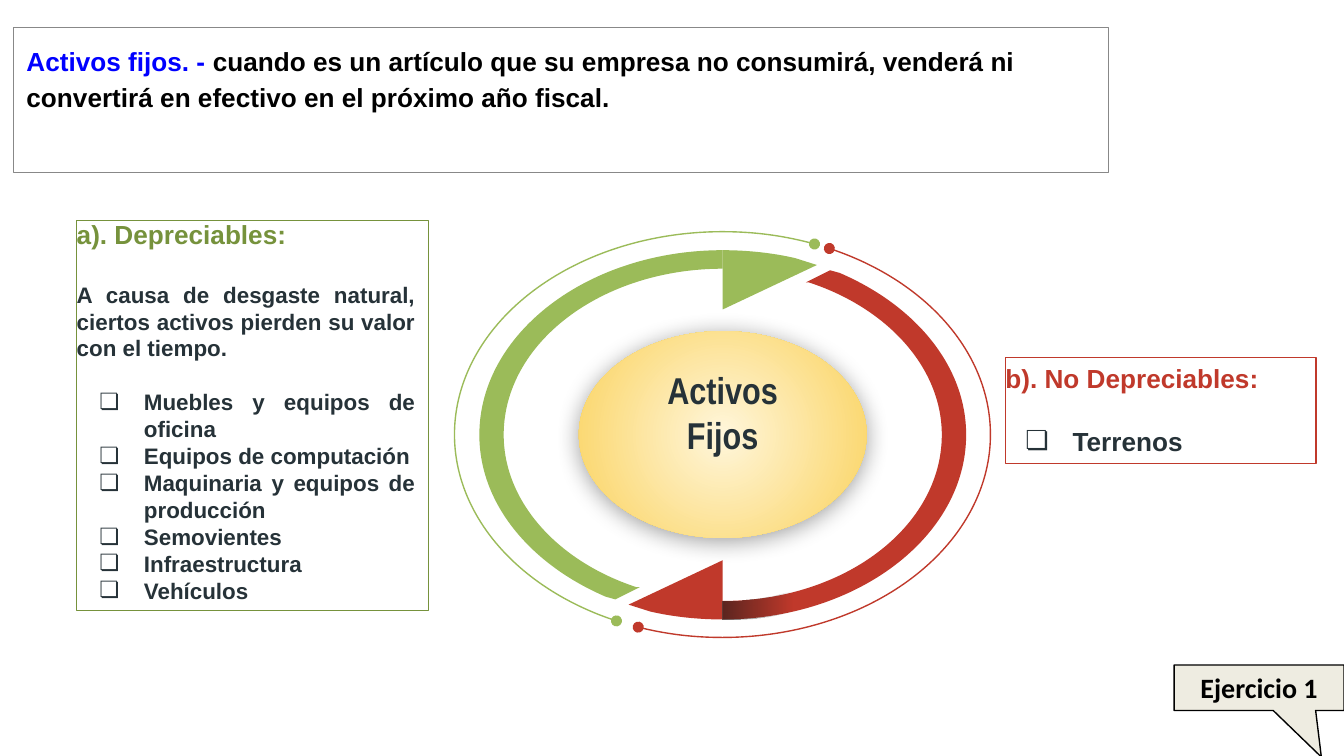
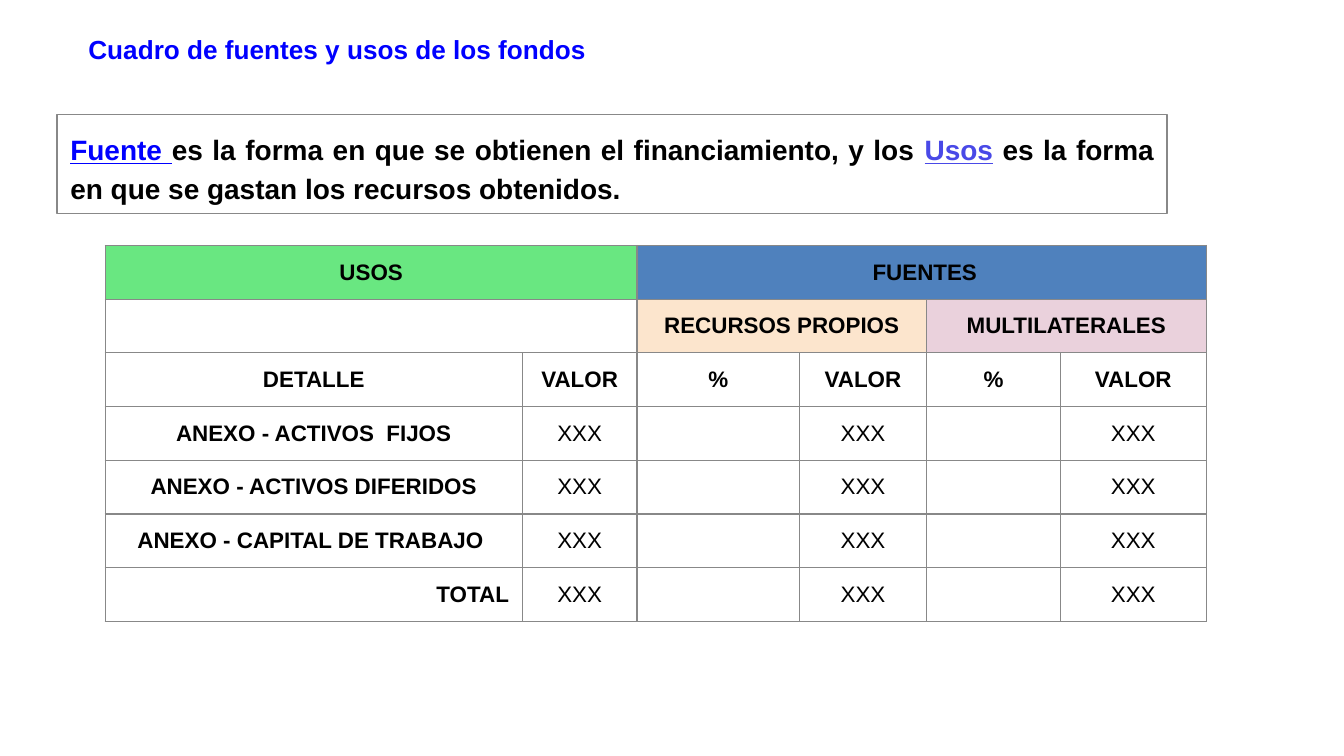
import functools

import lxml.etree
import pptx
import pptx.dml.color
import pptx.enum.shapes
import pptx.enum.text
import pptx.oxml
import pptx.oxml.ns
import pptx.util

Cm, Pt = pptx.util.Cm, pptx.util.Pt
RGB = pptx.dml.color.RGBColor.from_string
qn = pptx.oxml.ns.qn
Side = pptx.enum.text.PP_ALIGN
Edge = pptx.enum.text.MSO_ANCHOR
Kind = pptx.enum.shapes.MSO_SHAPE

# Theme: colours, type sizes, fonts
theme = {
    "black": RGB("000000"), "white": RGB("FFFFFF"), "gray": RGB("888888"),
    "ink": RGB("263238"), "blue": RGB("0000FF"), "violet": RGB("4949E7"),
    "green": RGB("9BBB59"), "olive": RGB("76923C"), "red": RGB("C0392B"),
    "cream": RGB("FFF6DB"), "gold": RGB("FAD25C"), "shade": RGB("181818"),
    "sand": RGB("EEECE1"), "mint": RGB("69E781"), "steel": RGB("4F81BD"),
    "peach": RGB("FCE5CD"), "pink": RGB("EAD1DC"),
    "small": Pt(12), "head": Pt(14), "large": Pt(15), "core": Pt(20),
    "thin": Pt(0.75), "font": "Arial",
}


def put(obj, vals):
    """Set attributes, dotted names included, from a dict."""
    for key, val in vals.items():
        *way, last = key.split(".")
        setattr(functools.reduce(getattr, way, obj), last, val)


def write(frame, lines):
    """Fill a text frame with (paragraph format, [(text, size, colour, extra)])."""
    for pos, (form, runs) in enumerate(lines):
        para = frame.add_paragraph() if pos else frame.paragraphs[0]
        put(para, {"space_before": Pt(0), "space_after": Pt(0), **form})
        for text, size, tone, extra in runs:
            run = para.add_run()
            run.text = text
            put(run.font, {"name": theme["font"], "bold": True, "size": theme[size],
                           "color.rgb": theme[tone], **extra})


deck = pptx.Presentation()
put(deck, {"slide_width": Cm(25.4), "slide_height": Cm(14.29)})
first = deck.slides.add_slide(deck.slide_layouts[3])
second = deck.slides.add_slide(deck.slide_layouts[6])

# Formats shared by the boxes
inset = {"margin_left": Cm(0.25), "margin_top": Cm(0.25),
         "margin_right": Cm(0.25), "margin_bottom": Cm(0.25)}
pad = {**inset, "word_wrap": True, "vertical_anchor": Edge.TOP,
       "auto_size": pptx.enum.text.MSO_AUTO_SIZE.NONE}
slim = {**pad, "margin_left": 0, "margin_top": Cm(0.13), "margin_bottom": Cm(0.13),
        "vertical_anchor": Edge.BOTTOM}
note = second.shapes.add_shape(Kind.RECTANGLE, 0, 0, 0, 0)
call = first.shapes.add_shape(Kind.RECTANGULAR_CALLOUT, 0, 0, 0, 0)
call.adjustments[0], call.adjustments[1] = 0.367, 1.524
left, right = first.placeholders[1], first.placeholders[2]

boxes = [
    (first.shapes.title, (0.25, 0.52, 20.7, 2.74), "white", "gray", pad),
    (left, (1.45, 4.17, 6.65, 7.37), "white", "olive", slim),
    (right, (19.0, 6.76, 5.87, 2.0), "white", "red", slim),
    (call, (22.19, 12.57, 3.21, 0.86), "sand", "black",
     {**pad, "vertical_anchor": Edge.MIDDLE}),
    (note, (1.08, 2.16, 20.98, 1.88), "white", "gray", pad),
]
for box, spot, fill, edge, form in boxes:
    put(box, dict(zip(("left", "top", "width", "height"), map(Cm, spot))))
    put(box.text_frame, form)
    box.fill.solid()
    put(box, {"fill.fore_color.rgb": theme[fill], "line.color.rgb": theme[edge],
              "line.width": theme["thin"], "shadow.inherit": False})

# Slide 1: definition and callout
lead = {"alignment": Side.LEFT, "line_spacing": 1.15}
write(first.shapes.title.text_frame, [(lead, [
    ("Activos fijos. -", "head", "blue", {}),
    (" cuando es un artículo que su empresa no consumirá, venderá ni convertirá "
     "en efectivo en el próximo año fiscal.", "head", "black", {})])])
write(call.text_frame, [({"alignment": Side.CENTER},
                         [("Ejercicio 1", "large", "black", {"name": "Calibri"})])])

# Slide 1: lists of assets
lists = [
    (left, "a). Depreciables:", "olive",
     "A causa de desgaste natural, ciertos activos pierden su valor con el tiempo.",
     ["Muebles y equipos de oficina", "Equipos de computación",
      "Maquinaria y equipos de producción", "Semovientes", "Infraestructura",
      "Vehículos"], "small", 0.84),
    (right, "b). No Depreciables:", "red", None, ["Terrenos"], "head", 0.89),
]
for box, head, tone, text, items, size, hang in lists:
    flush = {"alignment": Side.JUSTIFY}
    lines = [(flush, [(head, "head", tone, {})])]
    if text:
        lines.append(({**flush, "space_before": Pt(16.5)}, [(text, size, "ink", {})]))
    plain = len(lines)
    for pos, item in enumerate(items):
        gap = Pt(0) if pos else Pt(14.5 if text else 17)
        lines.append(({**flush, "space_before": gap}, [(item, size, "ink", {})]))
    write(box.text_frame, lines)
    for pos, para in enumerate(box.text_frame.paragraphs):
        prop = para._p.get_or_add_pPr()
        mark = pos >= plain
        prop.set("marL", str(Cm(1.27) if mark else 0))
        prop.set("indent", str(-Cm(hang) if mark else 0))
        if mark:
            tint = lxml.etree.SubElement(prop, qn("a:buClr"))
            lxml.etree.SubElement(tint, qn("a:srgbClr"), val=str(theme["ink"]))
            lxml.etree.SubElement(prop, qn("a:buChar"), char="❏")
        else:
            lxml.etree.SubElement(prop, qn("a:buNone"))

# Slide 1: thin outer arcs with round ends
for tone, start, end in (("red", 179.93, 68.17), ("green", 71.78, 177.46)):
    arc = first.shapes.add_shape(Kind.ARC, Cm(8.59), Cm(4.38), Cm(10.13), Cm(7.67))
    arc.adjustments[0], arc.adjustments[1] = start, end
    arc.fill.background()
    put(arc, {"line.color.rgb": theme[tone], "line.width": theme["thin"],
              "shadow.inherit": False})
    for tag in ("a:headEnd", "a:tailEnd"):
        lxml.etree.SubElement(arc.line._get_or_add_ln(), qn(tag), type="oval")

# Slide 1: golden core with a soft shadow
core = first.shapes.add_shape(Kind.OVAL, Cm(10.94), Cm(6.26), Cm(5.44), Cm(3.91))
core.line.fill.background()
core.shadow.inherit = False
core.fill.gradient()
for stop, tone in zip(core.fill.gradient_stops, ("cream", "gold")):
    stop.color.rgb = theme[tone]
prop = core._element.spPr
grad = prop.find(qn("a:gradFill"))
grad.remove(grad.find(qn("a:lin")))
glow = lxml.etree.SubElement(grad, qn("a:path"), path="circle")
lxml.etree.SubElement(glow, qn("a:fillToRect"), l="50000", t="50000", r="50000", b="50000")
cast = lxml.etree.SubElement(prop.find(qn("a:effectLst")), qn("a:outerShdw"),
                             blurRad=str(Pt(13)), dist=str(Pt(2)), dir="5400000")
tint = lxml.etree.SubElement(cast, qn("a:srgbClr"), val=str(theme["black"]))
lxml.etree.SubElement(tint, qn("a:alpha"), val="38000")
put(core.text_frame, {**slim, "margin_left": Cm(0.25), "margin_bottom": Cm(0.96)})
write(core.text_frame, [({"alignment": Side.CENTER},
                         [("Activos Fijos", "core", "ink", {"name": "Arial Narrow"})])])

# Slide 1: ring of two arrows, the red one being the green one turned half way.
# Outlines run from the ring's centre; a step of one point is a line, of three a curve.
mid_x, mid_y = 13.66, 8.22
band = [
    [(0, -3.49)], [(0, -3.14)],
    [(-2.29, -3.14), (-4.14, -1.74), (-4.14, 0)],
    [(-4.14, 1.28), (-3.1, 2.4), (-1.63, 2.88)],
    [(-1.57, 2.88)], [(-1.73, 2.96)], [(-2.03, 3.11)], [(-2.21, 3.06)],
    [(-3.63, 2.45), (-4.6, 1.31), (-4.6, 0)],
    [(-4.6, -1.92), (-2.54, -3.49), (0, -3.49)],
]
point = [[(0, -3.49)], [(0.46, -3.49), (0.94, -3.44), (1.37, -3.34)],
         [(1.78, -3.21)], [(0, -2.37)]]
fade = [[(1.32, 2.96)], [(1.32, 3.34)], [(0.91, 3.42)],
        [(0.61, 3.47), (0.3, 3.49), (0, 3.49)], [(0, 3.14)],
        [(0.43, 3.14), (0.84, 3.09), (1.22, 2.98)]]
for tone, steps, sign in (("green", band, 1), ("green", point, 1), ("red", point, -1),
                          ("red", band, -1), ("shade", fade, 1)):
    spots = [(Cm(mid_x + sign * x), Cm(mid_y + sign * y))
             for step in steps for x, y in step]
    pen = first.shapes.build_freeform(*spots[0])
    pen.add_line_segments(spots[1:], close=True)
    part = pen.convert_to_shape()
    legs = iter(list(part._element.iter(qn("a:lnTo"))))
    for step in steps[1:]:
        trio = [next(legs) for _ in step]
        if len(trio) == 3:
            trio[0].addprevious(curve := lxml.etree.Element(qn("a:cubicBezTo")))
            for leg in trio:
                curve.append(leg[0])
                leg.getparent().remove(leg)
    part.shadow.inherit = False
    part.line.fill.background()
    if tone != "shade":
        part.fill.solid()
        part.fill.fore_color.rgb = theme[tone]
        continue
    part.fill.gradient()
    part.fill.gradient_angle = 0
    for stop in part.fill.gradient_stops:
        stop.color.rgb = theme[tone]
    for tint, alpha in zip(part._element.spPr.iter(qn("a:srgbClr")), ("60000", "0")):
        lxml.etree.SubElement(tint, qn("a:alpha"), val=alpha)

# Slide 2: heading in a table of one cell, and definition
top = second.shapes.add_table(1, 1, Cm(1.42), Cm(0.43), Cm(10.64), Cm(1.09)).table
put(top, {"first_row": False, "horz_banding": False})
cell = top.cell(0, 0)
put(cell, inset)
cell.fill.background()
write(cell.text_frame, [({"alignment": Side.LEFT}, [
    ("Cuadro de fuentes y usos de los fondos", "head", "blue", {})])])
write(note.text_frame, [({**lead, "alignment": Side.JUSTIFY}, [
    ("Fuente ", "large", "blue", {"underline": True}),
    ("es la forma en que se obtienen el financiamiento, y los ", "large", "black", {}),
    ("Usos", "large", "violet", {"underline": True}),
    (" es la forma en que se gastan los recursos obtenidos.", "large", "black", {})])])

# Slide 2: table of uses and sources
sums = ["XXX", "", "XXX", "", "XXX"]
rows = [
    ["USOS", "", " FUENTES", "", "", ""],
    ["", "", "RECURSOS PROPIOS", "", "MULTILATERALES", ""],
    ["DETALLE", "VALOR", "%", "VALOR", "%", "VALOR"],
    ["ANEXO - ACTIVOS  FIJOS", *sums],
    ["ANEXO - ACTIVOS DIFERIDOS", *sums],
    ["ANEXO - CAPITAL DE TRABAJO ", *sums],
    ["TOTAL", *sums],
]
fills = {(0, 0): "mint", (0, 2): "steel", (1, 2): "peach", (1, 4): "pink"}
wide = [7.88, 2.17, 3.07, 2.4, 2.53, 2.76]
grid = second.shapes.add_table(len(rows), len(wide), Cm(1.99), Cm(4.64),
                               Cm(sum(wide)), Cm(7.11)).table
put(grid, {"first_row": False, "horz_banding": False})
for col, size in zip(grid.columns, wide):
    col.width = Cm(size)
for r, row in enumerate(rows):
    grid.rows[r].height = Cm(7.11 / len(rows))
    for c, text in enumerate(row):
        cell = grid.cell(r, c)
        put(cell, {**inset, "margin_top": Cm(0.1), "margin_bottom": Cm(0.1),
                   "vertical_anchor": Edge.MIDDLE})
        for tag in ("a:lnL", "a:lnR", "a:lnT", "a:lnB"):
            line = lxml.etree.SubElement(cell._tc.get_or_add_tcPr(), qn(tag),
                                         w=str(theme["thin"]))
            tint = lxml.etree.SubElement(line, qn("a:solidFill"))
            lxml.etree.SubElement(tint, qn("a:srgbClr"), val=str(theme["gray"]))
        cell.fill.solid()
        cell.fill.fore_color.rgb = theme[fills.get((r, c), "white")]
        if text:
            side = Side.RIGHT if text == "TOTAL" else Side.CENTER
            write(cell.text_frame, [({"alignment": side}, [
                (text, "small", "black", {"bold": text != "XXX"})])])
for r, c, end in ((0, 0, 1), (0, 2, 5), (1, 0, 1), (1, 2, 3), (1, 4, 5)):
    grid.cell(r, c).merge(grid.cell(r, end))

deck.save("out.pptx")
